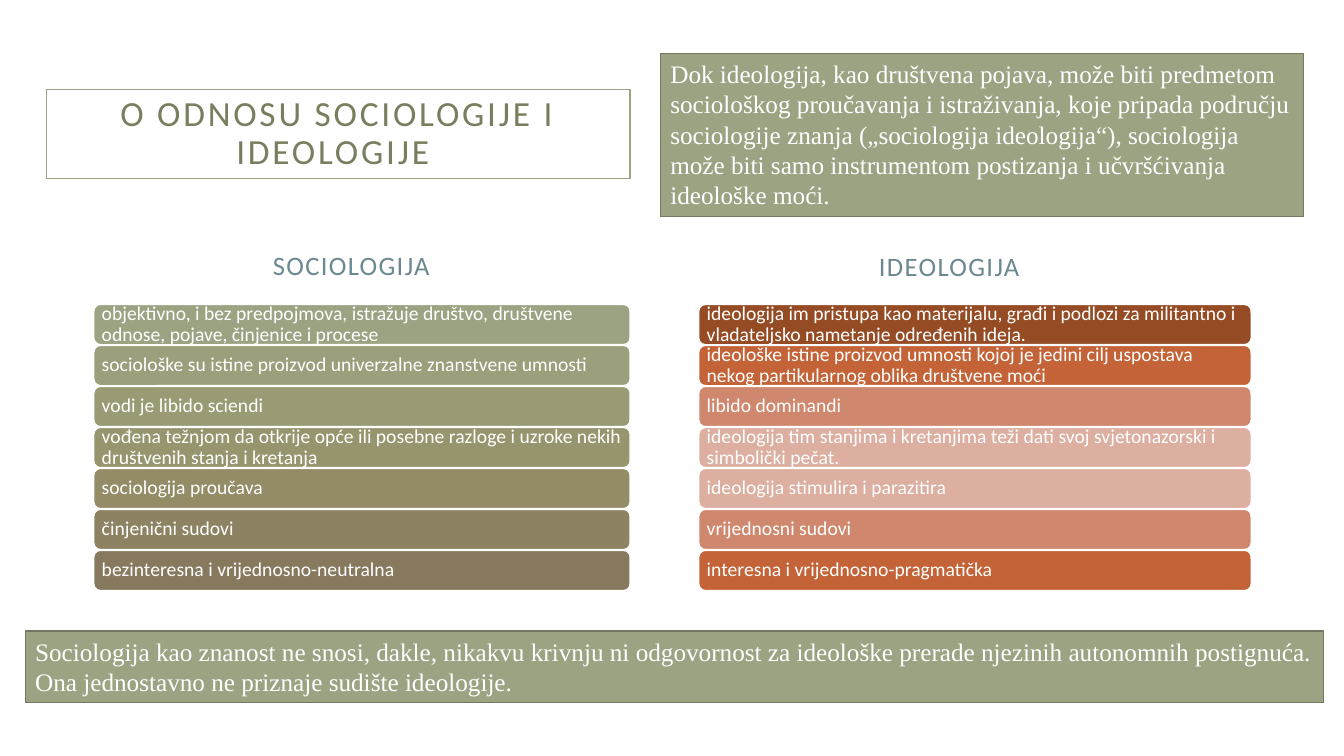
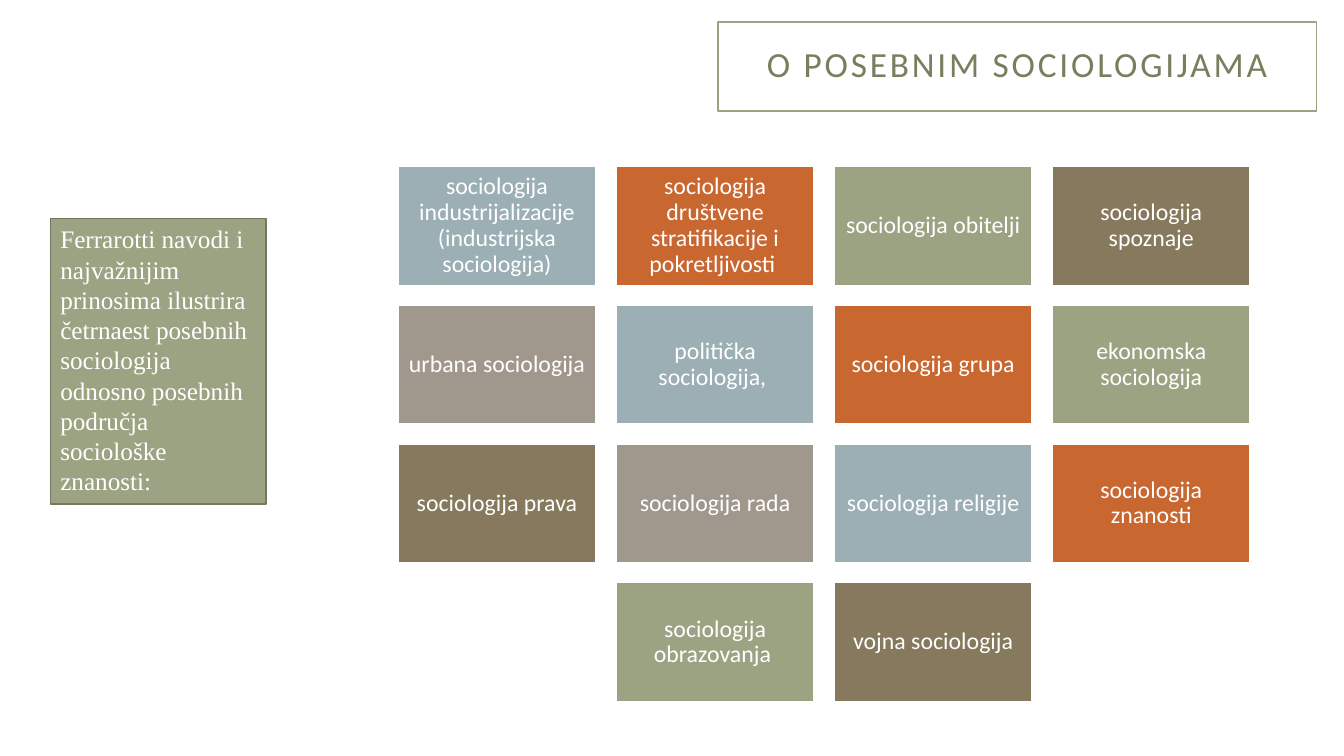
import pptx
import pptx.dml.color
import pptx.enum.shapes
import pptx.enum.text
import pptx.util
from dataclasses import dataclass
from typing import Any

Inches = pptx.util.Inches
Pt = pptx.util.Pt
Align = pptx.enum.text.PP_ALIGN
Anchor = pptx.enum.text.MSO_ANCHOR
AutoSize = pptx.enum.text.MSO_AUTO_SIZE
Geometry = pptx.enum.shapes.MSO_SHAPE

WHITE = "FFFFFF"
SAGE = "9CA383"
SAGE_DARK = "737961"
OLIVE = "777F5E"
TEAL = "6B8891"
BLUE = "9BAFB5"
ORANGE = "C96731"
BROWN = "87795D"
TAUPE = "A0988C"
TILE_COLOURS = [BLUE, ORANGE, SAGE, BROWN, TAUPE]


@dataclass(frozen=True)
class Place:
    left: float
    top: float
    width: float
    height: float


@dataclass(frozen=True)
class TextStyle:
    size: float
    colour: str = WHITE
    font: str = "Calibri"
    align: Any = Align.LEFT
    anchor: Any = Anchor.MIDDLE
    side_inset: float = 0.1
    end_inset: float = 0.05
    line_spacing: float = 1.0
    tracking: int = 0
    auto_size: Any = AutoSize.NONE


@dataclass(frozen=True)
class BarColumn:
    heading: str
    heading_place: Place
    left: float
    width: float
    bars: list[tuple[str, str]]


TITLE = TextStyle(25.2, OLIVE, align=Align.CENTER, side_inset=0.2, end_inset=0.2,
                  line_spacing=0.9, tracking=200)
HEADING = TextStyle(19, TEAL, align=Align.CENTER, anchor=Anchor.BOTTOM, tracking=100)
CALLOUT = TextStyle(18, font="Times New Roman", anchor=Anchor.TOP,
                    auto_size=AutoSize.SHAPE_TO_FIT_TEXT)
BAR = TextStyle(14, side_inset=0.06, end_inset=0.06, line_spacing=0.9)
TILE = TextStyle(17, align=Align.CENTER, side_inset=0.07, end_inset=0.07, line_spacing=0.9)

BAR_TOP, BAR_HEIGHT, BAR_PITCH = 3.02, 0.4, 2.44 / 6
TILE_LEFT, TILE_TOP, TILE_WIDTH, TILE_HEIGHT = 3.95, 1.65, 1.96, 1.18
TILE_STEP_X, TILE_STEP_Y, TILES_PER_ROW = 2.163, 1.377, 4

COLUMNS = [
    BarColumn("SOCIOLOGIJA", Place(1.15, 2.38, 4.67, 0.46), 0.93, 5.32, [
        ("objektivno, i bez predpojmova, istražuje društvo, društvene odnose, pojave, "
         "činjenice i procese", SAGE),
        ("sociološke su istine proizvod univerzalne znanstvene umnosti", "9B9F7C"),
        ("vodi je libido sciendi", "9A9B75"),
        ("vođena težnjom da otkrije opće ili posebne razloge i uzroke nekih društvenih "
         "stanja i kretanja", "97956E"),
        ("sociologija proučava", "938C67"),
        ("činjenični sudovi", "8D8362"),
        ("bezinteresna i vrijednosno-neutralna", BROWN),
    ]),
    BarColumn("IDEOLOGIJA", Place(7.08, 2.42, 4.67, 0.42), 6.93, 5.48, [
        ("ideologija im pristupa kao materijalu, građi i podlozi za militantno i "
         "vladateljsko nametanje određenih ideja.", "954C24"),
        ("ideološke istine proizvod umnosti kojoj je jedini cilj uspostava nekog "
         "partikularnog oblika društvene moći", "C36337"),
        ("libido dominandi", "CF886D"),
        ("ideologija tim stanjima i kretanjima teži dati svoj svjetonazorski i "
         "simbolički pečat.", "DCAFA1"),
        ("ideologija stimulira i parazitira", "DCAFA1"),
        ("vrijednosni sudovi", "CF886D"),
        ("interesna i vrijednosno-pragmatička", "C36337"),
    ]),
]

SOCIOLOGIES = [
    "sociologija industrijalizacije (industrijska sociologija)",
    "sociologija društvene stratifikacije i pokretljivosti ",
    "sociologija obitelji",
    "sociologija spoznaje",
    "urbana sociologija",
    "politička sociologija, ",
    "sociologija grupa",
    "ekonomska sociologija",
    "sociologija prava",
    "sociologija rada",
    "sociologija religije",
    "sociologija znanosti",
    "sociologija\nobrazovanja ",
    "vojna sociologija",
]


def colour(value: str) -> pptx.dml.color.RGBColor:
    return pptx.dml.color.RGBColor.from_string(value)


def assign(target: Any, values: dict[str, Any]) -> None:
    for name, value in values.items():
        setattr(target, name, value)


def lengths(place: Place) -> list[Any]:
    return [Inches(value) for value in (place.left, place.top, place.width, place.height)]


def write(box: Any, text: str, style: TextStyle) -> None:
    frame = box.text_frame
    side, end = Inches(style.side_inset), Inches(style.end_inset)
    assign(frame, {"word_wrap": True, "auto_size": style.auto_size,
                   "vertical_anchor": style.anchor, "margin_left": side,
                   "margin_right": side, "margin_top": end, "margin_bottom": end})
    para = frame.paragraphs[0]
    para.text = text
    assign(para, {"alignment": style.align, "line_spacing": style.line_spacing})
    for span in para.runs:
        assign(span.font, {"name": style.font, "size": Pt(style.size)})
        span.font.color.rgb = colour(style.colour)
        if style.tracking:
            span.font._element.set("spc", str(style.tracking))


def add_panel(page: Any, place: Place, text: str, style: TextStyle, fill: str,
              line: str = WHITE, geometry: Any = Geometry.RECTANGLE) -> None:
    box = page.shapes.add_shape(geometry, *lengths(place))
    box.shadow.inherit = False
    box.fill.solid()
    box.fill.fore_color.rgb = colour(fill)
    box.line.color.rgb = colour(line)
    box.line.width = Pt(1)
    write(box, text, style)


def add_title(page: Any, place: Place, text: str) -> None:
    add_panel(page, place, text, TITLE, WHITE, SAGE)


def add_callout(page: Any, place: Place, text: str) -> None:
    add_panel(page, place, text, CALLOUT, SAGE, SAGE_DARK)


def add_bar_column(page: Any, column: BarColumn) -> None:
    write(page.shapes.add_textbox(*lengths(column.heading_place)), column.heading, HEADING)
    for index, (text, fill) in enumerate(column.bars):
        place = Place(column.left, BAR_TOP + index * BAR_PITCH, column.width, BAR_HEIGHT)
        add_panel(page, place, text, BAR, fill, geometry=Geometry.ROUNDED_RECTANGLE)


def add_tiles(page: Any) -> None:
    for index, text in enumerate(SOCIOLOGIES):
        row, position = divmod(index, TILES_PER_ROW)
        in_row = min(TILES_PER_ROW, len(SOCIOLOGIES) - row * TILES_PER_ROW)
        step = position + (TILES_PER_ROW - in_row) / 2
        place = Place(TILE_LEFT + step * TILE_STEP_X, TILE_TOP + row * TILE_STEP_Y,
                      TILE_WIDTH, TILE_HEIGHT)
        add_panel(page, place, text, TILE, TILE_COLOURS[index % len(TILE_COLOURS)])


def build_comparison(page: Any) -> None:
    for column in COLUMNS:
        add_bar_column(page, column)
    add_title(page, Place(0.46, 0.89, 5.79, 0.88), "O ODNOSU SOCIOLOGIJE I IDEOLOGIJE ")
    add_callout(page, Place(6.55, 0.53, 6.38, 1.62),
                "Dok ideologija, kao društvena pojava, može biti predmetom sociološkog "
                "proučavanja i istraživanja, koje pripada području sociologije znanja "
                "(„sociologija ideologija“), sociologija može biti samo instrumentom "
                "postizanja i učvršćivanja ideološke moći.")
    add_callout(page, Place(0.25, 6.26, 12.88, 0.71),
                "Sociologija kao znanost ne snosi, dakle, nikakvu krivnju ni odgovornost "
                "za ideološke prerade njezinih autonomnih postignuća. Ona jednostavno ne "
                "priznaje sudište ideologije.")


def build_sociologies(page: Any) -> None:
    add_title(page, Place(7.12, 0.22, 5.94, 0.88), "O POSEBNIM SOCIOLOGIJAMA")
    add_tiles(page)
    add_callout(page, Place(0.5, 2.17, 2.14, 2.83),
                "Ferrarotti navodi i najvažnijim prinosima ilustrira četrnaest posebnih "
                "sociologija odnosno posebnih područja sociološke znanosti:")


def main() -> None:
    deck = pptx.Presentation()
    assign(deck, {"slide_width": Inches(13.33), "slide_height": Inches(7.5)})
    for build in (build_comparison, build_sociologies):
        build(deck.slides.add_slide(deck.slide_layouts[6]))
    deck.save("out.pptx")


if __name__ == "__main__":
    main()
